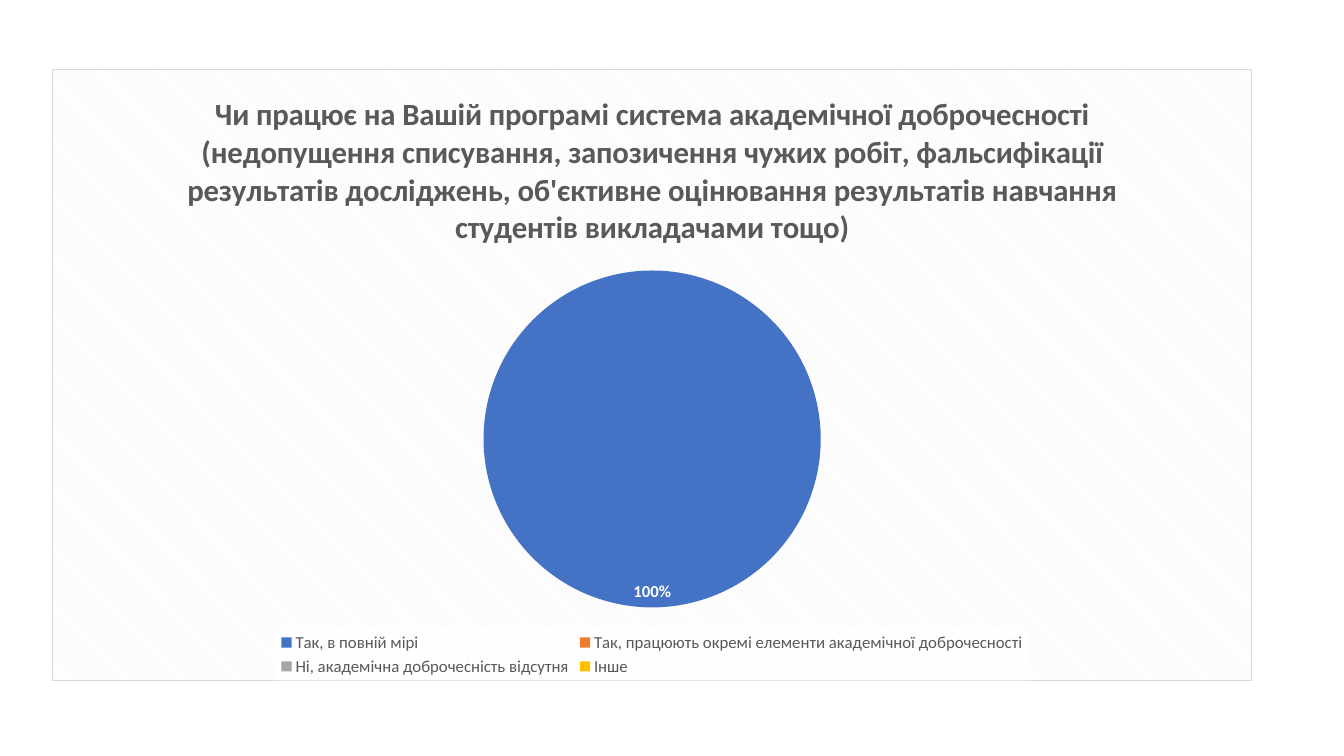
from lxml.etree import fromstring as to_xml
from pptx import Presentation
from pptx.chart.data import CategoryChartData as Data
from pptx.dml.color import RGBColor
from pptx.enum.chart import XL_CHART_TYPE as Kind, XL_LABEL_POSITION as Spot
from pptx.enum.chart import XL_LEGEND_POSITION as Side
from pptx.util import Cm, Pt

TITLE = (
    "Чи працює на Вашій програмі система академічної доброчесності "
    "(недопущення списування, запозичення чужих робіт, фальсифікації "
    "результатів досліджень, об'єктивне оцінювання результатів навчання "
    "студентів викладачами тощо)"
)
SLICES = [
    ("Так, в повній мірі", 100, "4472C4"),
    ("Так, працюють окремі елементи академічної доброчесності", 0, "ED7D31"),
    ("Ні, академічна доброчесність відсутня", 0, "A5A5A5"),
    ("Інше", 0, "FFC000"),
]
GREY = "595959"
SPACE = (
    'xmlns:c="http://schemas.openxmlformats.org/drawingml/2006/chart" '
    'xmlns:a="http://schemas.openxmlformats.org/drawingml/2006/main"'
)
FRAME = f"""<c:spPr {SPACE}>
<a:pattFill prst="dkDnDiag"><a:fgClr><a:srgbClr val="F2F2F2"/></a:fgClr>
<a:bgClr><a:srgbClr val="FFFFFF"/></a:bgClr></a:pattFill>
<a:ln w="9525"><a:solidFill><a:srgbClr val="D9D9D9"/></a:solidFill></a:ln>
</c:spPr>"""
VEIL = f"""<c:spPr {SPACE}><a:solidFill><a:srgbClr val="FFFFFF">
<a:alpha val="78000"/></a:srgbClr></a:solidFill></c:spPr>"""


def color(code):
    """Turn a hex string into a colour."""
    return RGBColor.from_string(code)


def style(font, size, code, bold=False):
    """Set the face, size, colour and weight of a font."""
    font.name = "Calibri"
    font.size = Pt(size)
    font.bold = bold
    font.color.rgb = color(code)


def add_pie(slide, left, top, width, height):
    """Add the pie with coloured slices and return its chart."""
    data = Data(number_format="General")
    data.categories = [name for name, _, _ in SLICES]
    data.add_series(TITLE, [value for _, value, _ in SLICES])
    chart = slide.shapes.add_chart(
        Kind.PIE, Cm(left), Cm(top), Cm(width), Cm(height), data
    ).chart
    style(chart.font, 10, "000000")
    plot = chart.plots[0]
    plot.vary_by_categories = True
    for i, (_, _, code) in enumerate(SLICES):
        fill = plot.series[0].points[i].format.fill
        fill.solid()
        fill.fore_color.rgb = color(code)
    return chart


def add_title(chart):
    """Put the question above the pie."""
    chart.has_title = True
    chart.chart_title.include_in_layout = False
    frame = chart.chart_title.text_frame
    frame.text = TITLE
    style(frame.paragraphs[0].font, 22, GREY, True)


def add_labels(chart):
    """Show the share inside each slice that is not empty."""
    labels = chart.plots[0].series[0].data_labels
    labels.show_percentage = True
    labels.show_value = False
    labels.number_format = "0%;;"
    labels.number_format_is_linked = False
    labels.position = Spot.INSIDE_END
    style(labels.font, 12, "FFFFFF", True)


def add_legend(chart):
    """Place the legend below the pie on a pale veil."""
    chart.has_legend = True
    legend = chart.legend
    legend.position = Side.BOTTOM
    legend.include_in_layout = False
    style(legend.font, 12, GREY)
    node = chart.element.find(".//{*}legend")
    node.find("{*}txPr").addprevious(to_xml(VEIL))


def add_frame(chart):
    """Give the chart a hatched ground and a thin border."""
    chart.element.find("{*}chart").addnext(to_xml(FRAME))


def main():
    """Build the slide and save it."""
    deck = Presentation()
    deck.slide_width, deck.slide_height = Cm(33.87), Cm(19.05)
    slide = deck.slides.add_slide(deck.slide_layouts[6])
    chart = add_pie(slide, 1.32, 1.74, 30.23, 15.42)
    add_title(chart)
    add_labels(chart)
    add_legend(chart)
    add_frame(chart)
    deck.save("out.pptx")


if __name__ == "__main__":
    main()
